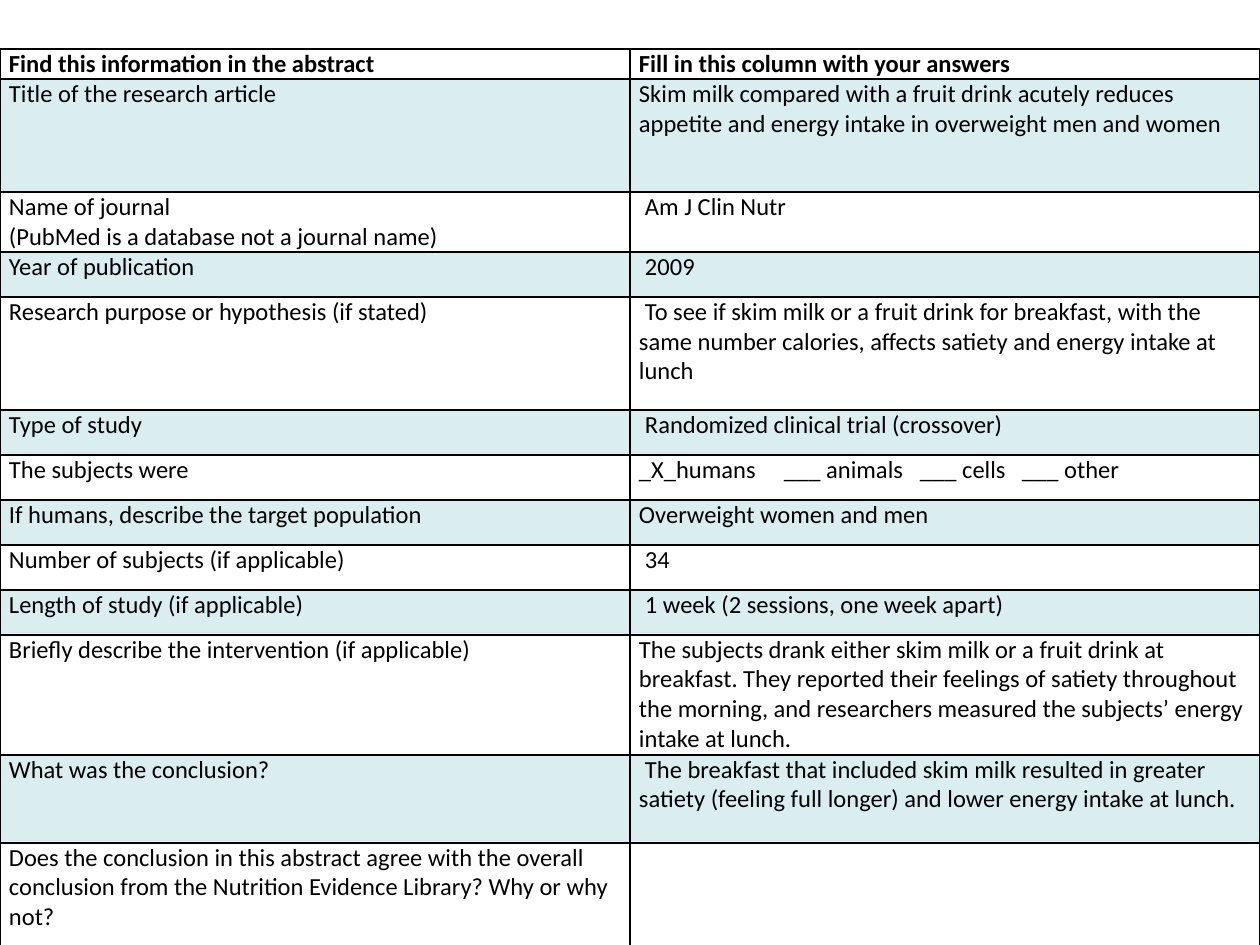
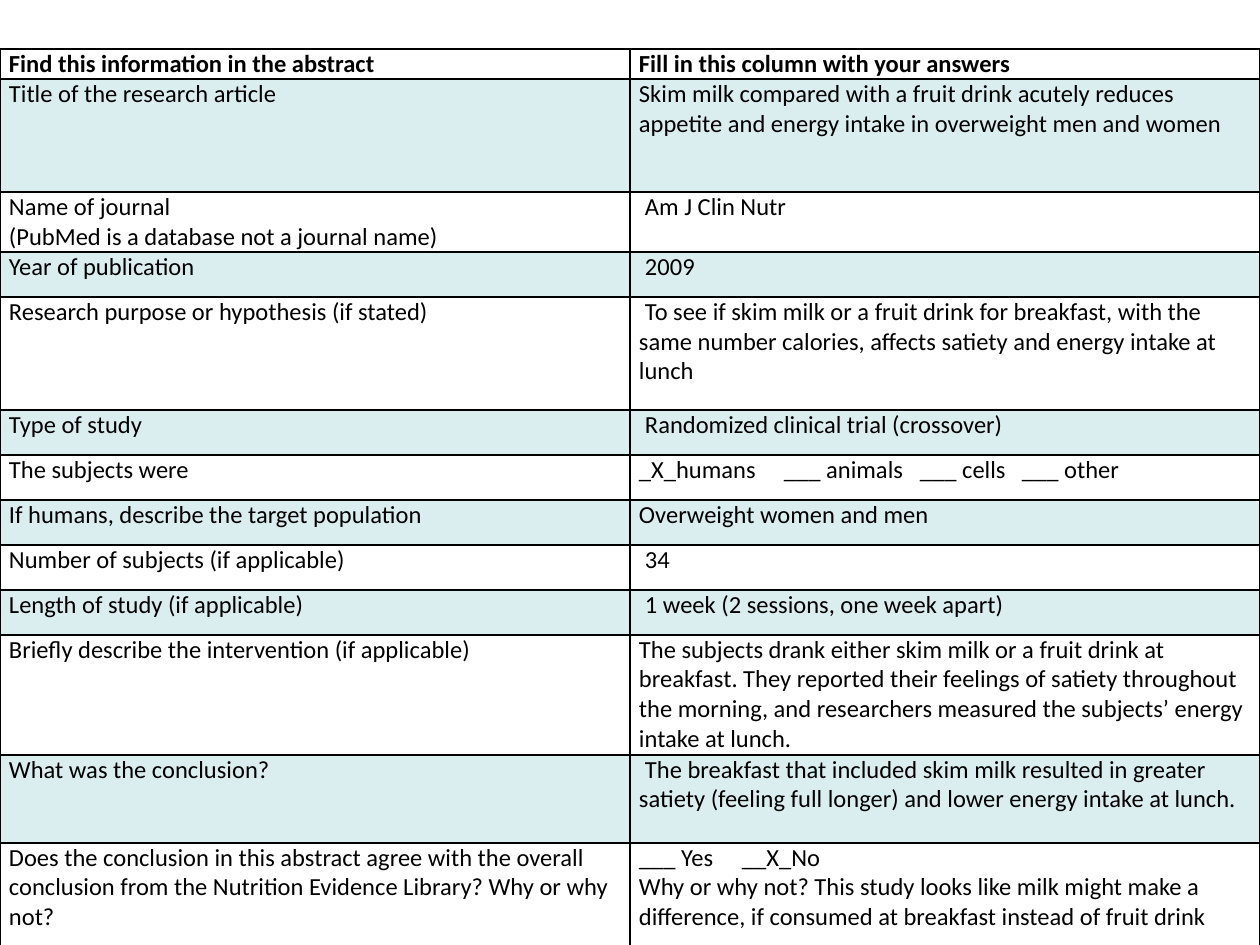
import pptx
import pptx.dml.color
import pptx.oxml.ns
import pptx.util
from lxml import etree

SCALE = 914400 / 126
INK, BAND, PLAIN = "000000", "DAEDEF", "FFFFFF"
FONT = {"name": "Calibri", "size": pptx.util.Pt(14)}
EDGES = {"margin_left": 9, "margin_right": 9, "margin_top": 0, "margin_bottom": 0}
TOP, WIDE, HIGH = 49, 1260, 945
INDENT = 6


def px(n):
    return pptx.util.Emu(round(n * SCALE))


def color(code):
    return pptx.dml.color.RGBColor.from_string(code)


# Each row: height, question, answer, and whether the answer is indented
rows = [
    (30, "Find this information in the abstract",
     "Fill in this column with your answers", False),
    (113, "Title of the research article",
     "Skim milk compared with a fruit drink acutely reduces appetite and "
     "energy intake in overweight men and women", False),
    (60, "Name of journal\n(PubMed is a database not a journal name)",
     "Am J Clin Nutr", True),
    (45, "Year of publication", "2009", True),
    (113, "Research purpose or hypothesis (if stated)",
     "To see if skim milk or a fruit drink for breakfast, with the same "
     "number calories, affects satiety and energy intake at lunch", True),
    (45, "Type of study", "Randomized clinical trial (crossover)", True),
    (45, "The subjects were",
     "_X_humans\t___ animals\t___ cells\t___ other", False),
    (45, "If humans, describe the target population",
     "Overweight women and men", False),
    (45, "Number of subjects (if applicable)", "34", True),
    (45, "Length of study (if applicable)",
     "1 week (2 sessions, one week apart)", True),
    (120, "Briefly describe the intervention (if applicable)",
     "The subjects drank either skim milk or a fruit drink at breakfast. "
     "They reported their feelings of satiety throughout the morning, and "
     "researchers measured the subjects’ energy intake at lunch.", False),
    (88, "What was the conclusion?",
     "The breakfast that included skim milk resulted in greater satiety "
     "(feeling full longer) and lower energy intake at lunch.", True),
]
last = ("Does the conclusion in this abstract agree with the overall conclusion "
        "from the Nutrition Evidence Library? Why or why not?")
verdicts = [
    "",
    "___ Yes\t__X_No\nWhy or why not? This study looks like milk might make a "
    "difference, if consumed at breakfast instead of fruit drink",
]

# Tab stops that space out the tick blanks, by number of gaps
stops = {1: [103], 3: [145, 281, 383]}

deck = pptx.Presentation()
deck.slide_width, deck.slide_height = px(WIDE), px(HIGH)
qn = pptx.oxml.ns.qn

for verdict in verdicts:
    slide = deck.slides.add_slide(deck.slide_layouts[6])
    grid = rows + [(151, last, verdict, False)]
    tall = sum(row[0] for row in grid)
    table = slide.shapes.add_table(len(grid), 2, 0, px(TOP), px(WIDE), px(tall)).table
    table.first_row = table.horz_banding = False

    for r, (height, ask, answer, inset) in enumerate(grid):
        table.rows[r].height = px(height)
        for c, text in enumerate((ask, answer)):
            cell = table.cell(r, c)
            for key, value in EDGES.items():
                setattr(cell, key, px(value))

            # Borders come before the fill
            props = cell._tc.get_or_add_tcPr()
            for side in ("a:lnL", "a:lnR", "a:lnT", "a:lnB"):
                line = etree.SubElement(props, qn(side), w=str(pptx.util.Pt(1)))
                fill = etree.SubElement(line, qn("a:solidFill"))
                etree.SubElement(fill, qn("a:srgbClr"), val=INK)
            cell.fill.solid()
            cell.fill.fore_color.rgb = color(BAND if r % 2 else PLAIN)

            # Text, with indents and tab stops where needed
            cell.text = text
            for para in cell.text_frame.paragraphs:
                form = para._p.get_or_add_pPr()
                if c and inset:
                    form.set("indent", str(px(INDENT)))
                gaps = para.text.count("\t")
                if gaps:
                    tabs = etree.SubElement(form, qn("a:tabLst"))
                    for stop in stops[gaps]:
                        etree.SubElement(tabs, qn("a:tab"), pos=str(px(stop)), algn="l")
                for font in [para.font] + [run.font for run in para.runs]:
                    for key, value in {**FONT, "bold": r == 0}.items():
                        setattr(font, key, value)
                    font.color.rgb = color(INK)

deck.save("out.pptx")
